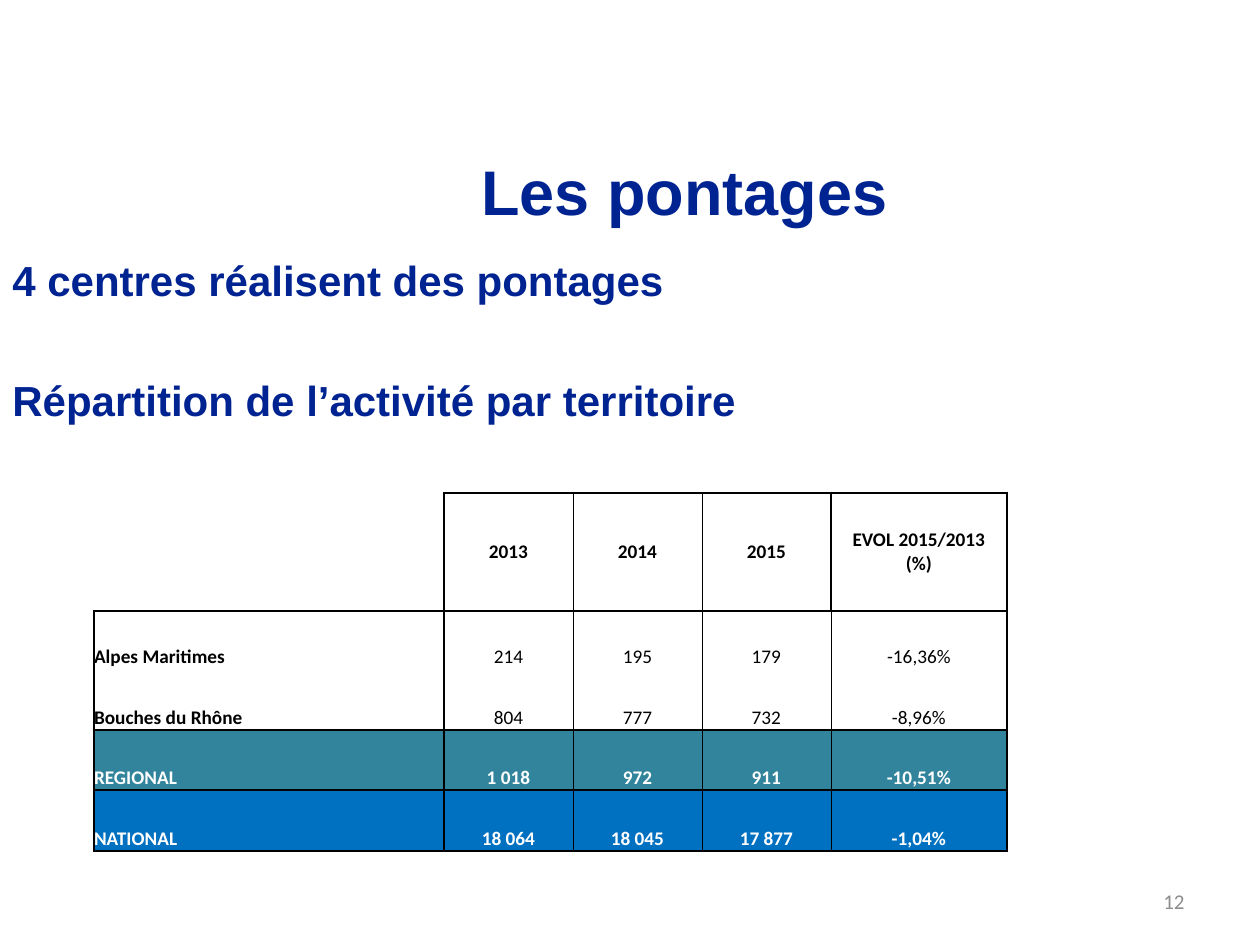
from lxml import etree
from pptx import Presentation
from pptx.dml.color import RGBColor
from pptx.enum.text import MSO_ANCHOR, PP_ALIGN
from pptx.oxml.ns import qn
from pptx.util import Emu, Pt

LEFT, CENTER, RIGHT = PP_ALIGN.LEFT, PP_ALIGN.CENTER, PP_ALIGN.RIGHT
TOP, MIDDLE, BOTTOM = MSO_ANCHOR.TOP, MSO_ANCHOR.MIDDLE, MSO_ANCHOR.BOTTOM
EMU_PER_PX = 914400 / 126

COLORS = {
    "navy": "002392",
    "black": "000000",
    "white": "FFFFFF",
    "gray": "8C8C8C",
    "teal": "31849B",
    "blue": "0070C0",
}
TITLE = {"name": "Arial", "size": Pt(36), "bold": True, "color": "navy"}
BODY = {**TITLE, "size": Pt(24)}
NUMBER = {"name": "Calibri", "size": Pt(12), "bold": False, "color": "gray"}
VALUE = {"name": "Calibri", "size": Pt(11), "bold": False, "color": "black"}
LABEL = {**VALUE, "bold": True}
TOTAL = {**LABEL, "color": "white"}

COLUMN_WIDTHS = [350, 129, 129, 129, 176, 129]
ROW_HEIGHTS = [60, 118, 58, 61, 60, 61, 58]
HEADER_ROW, REGIONAL_ROW, NATIONAL_ROW = 1, 4, 5
EVOLUTION_COLUMN = 4
ROW_FILLS = {REGIONAL_ROW: "teal", NATIONAL_ROW: "blue"}
ACTIVITY = [
    ["", "2013", "2014", "2015", "EVOL 2015/2013\n(%)"],
    ["Alpes Maritimes", "214", "195", "179", "-16,36%"],
    ["Bouches du Rhône", "804", "777", "732", "-8,96%"],
    ["REGIONAL", "1 018", "972", "911", "-10,51%"],
    ["NATIONAL", "18 064", "18 045", "17 877", "-1,04%"],
]


def px(length):
    return Emu(round(length * EMU_PER_PX))


def rgb(name):
    return RGBColor.from_string(COLORS[name])


def write_paragraph(para, text, style, align):
    para.text = text
    para.alignment = align
    for line_break in para._p.findall(qn("a:br")):
        etree.SubElement(line_break, qn("a:rPr"), sz=str(int(style["size"].pt * 100)))
    for span in para.runs:
        for key, value in style.items():
            if key == "color":
                span.font.color.rgb = rgb(value)
            else:
                setattr(span.font, key, value)


def add_text(page, bounds, lines, style, align, anchor, gap=0):
    box = page.shapes.add_textbox(*map(px, bounds))
    frame = box.text_frame
    frame.word_wrap = True
    frame.vertical_anchor = anchor
    for index, line in enumerate(lines):
        para = frame.add_paragraph() if index else frame.paragraphs[0]
        write_paragraph(para, line, style, align)
        if index:
            para.space_before = Pt(gap)
    return box


def vertical_width(row, edge):
    if not HEADER_ROW <= row <= NATIONAL_ROW or edge == 6:
        return 0
    if edge == 0:
        return 0 if row == HEADER_ROW else 1
    if edge in (2, 3) or (edge == EVOLUTION_COLUMN and row != HEADER_ROW):
        return 0.5
    return 1


def horizontal_width(edge, column):
    if column > EVOLUTION_COLUMN or edge in (0, 3, 7):
        return 0
    return 0 if edge == 1 and column == 0 else 1


def set_borders(cell, row, column):
    widths = {
        "a:lnL": vertical_width(row, column),
        "a:lnR": vertical_width(row, column + 1),
        "a:lnT": horizontal_width(row, column),
        "a:lnB": horizontal_width(row + 1, column),
    }
    properties = cell._tc.get_or_add_tcPr()
    for tag, width in widths.items():
        line = etree.SubElement(properties, qn(tag), w=str(Pt(width)))
        if width:
            fill = etree.SubElement(line, qn("a:solidFill"))
            etree.SubElement(fill, qn("a:srgbClr"), val=COLORS["black"])
        else:
            etree.SubElement(line, qn("a:noFill"))


def set_fill(cell, row, column):
    if row in ROW_FILLS and column <= EVOLUTION_COLUMN:
        cell.fill.solid()
        cell.fill.fore_color.rgb = rgb(ROW_FILLS[row])
    else:
        cell.fill.background()


def write_cell(cell, text, row, column):
    for side in ("left", "right", "top", "bottom"):
        setattr(cell, f"margin_{side}", 0)
    cell.vertical_anchor = MIDDLE if row == HEADER_ROW else BOTTOM
    if row in ROW_FILLS:
        style = TOTAL
    else:
        style = LABEL if row == HEADER_ROW or column == 0 else VALUE
    align = CENTER if column else LEFT
    write_paragraph(cell.text_frame.paragraphs[0], text, style, align)


def add_activity_table(page, left, top):
    size = (sum(COLUMN_WIDTHS), sum(ROW_HEIGHTS))
    table = page.shapes.add_table(
        len(ROW_HEIGHTS), len(COLUMN_WIDTHS), *map(px, (left, top, *size))
    ).table
    table.first_row = False
    table.horz_banding = False
    for column, width in enumerate(COLUMN_WIDTHS):
        table.columns[column].width = px(width)
    for row, height in enumerate(ROW_HEIGHTS):
        table.rows[row].height = px(height)
        for column in range(len(COLUMN_WIDTHS)):
            cell = table.cell(row, column)
            set_borders(cell, row, column)
            set_fill(cell, row, column)
    for row, texts in enumerate(ACTIVITY, HEADER_ROW):
        for column, text in enumerate(texts):
            if text:
                write_cell(table.cell(row, column), text, row, column)


def main():
    deck = Presentation()
    deck.slide_width, deck.slide_height = px(1260), px(945)
    page = deck.slides.add_slide(deck.slide_layouts[6])

    add_text(page, (302, 145, 765, 90), ["Les pontages"], TITLE, CENTER, MIDDLE)
    findings = ["4 centres réalisent des pontages", "Répartition de l’activité par territoire"]
    body = add_text(page, (0, 244, 1260, 546), findings, BODY, LEFT, TOP, gap=40)
    body.text_frame.margin_top = px(10)
    add_text(page, (903, 876, 294, 50), ["12"], NUMBER, RIGHT, MIDDLE)
    add_activity_table(page, 94, 433)

    deck.save("out.pptx")


if __name__ == "__main__":
    main()
